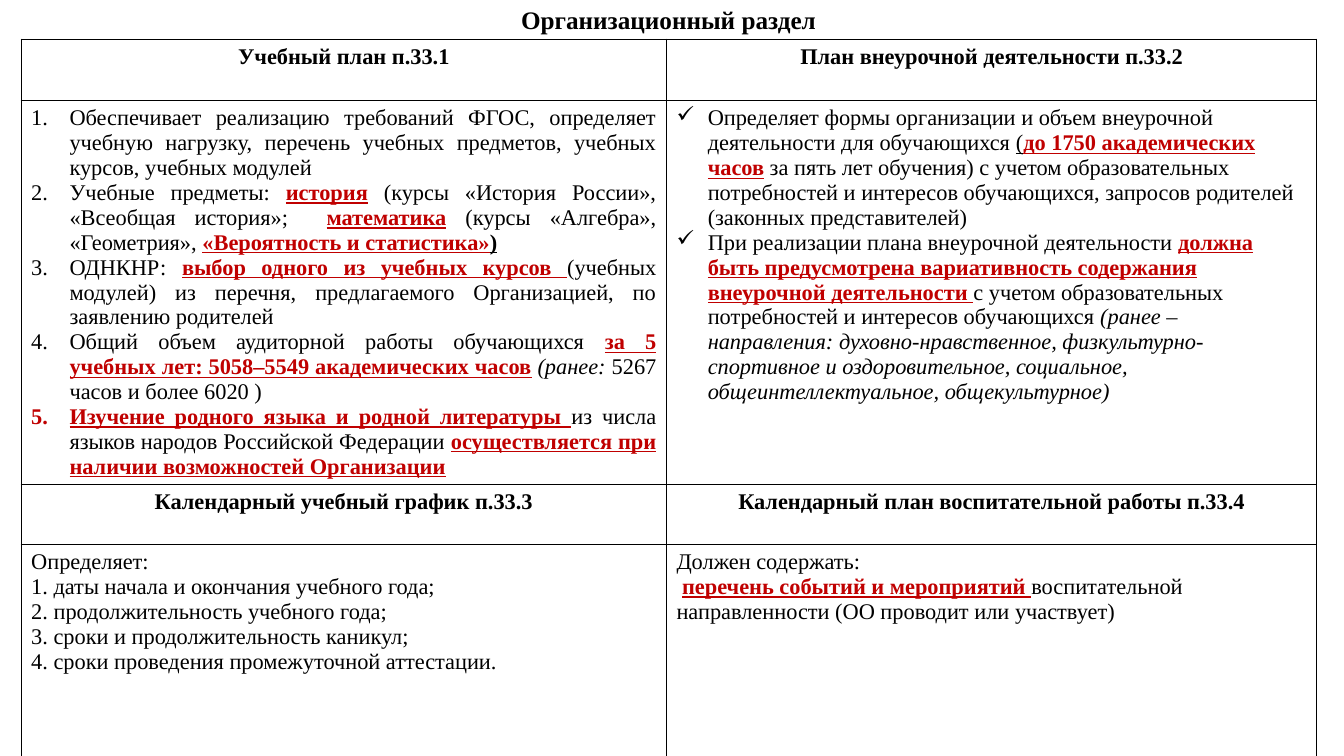
from lxml.etree import SubElement
from pptx import Presentation
from pptx.dml.color import RGBColor
from pptx.enum.text import PP_ALIGN
from pptx.oxml.ns import qn
from pptx.util import Inches, Pt

COLORS = {"text": "000000", "mark": "C00000", "fill": "FFFFFF", "line": "000000"}


class Page:
    """Holds the style and the current slide."""

    def __init__(self, slide, font="Times New Roman"):
        self.slide = slide
        self.font = font

    def color(self, name):
        return RGBColor.from_string(COLORS[name])

    # Flags of a run: b bold, u underline, i italic, r red
    def runs(self, para, parts, size):
        for part in parts:
            words, flags = (part, "") if isinstance(part, str) else part
            run = para.add_run()
            run.text = words
            font = run.font
            font.name, font.size = self.font, Pt(size)
            font.bold, font.italic = "b" in flags, "i" in flags
            font.underline = "u" in flags
            font.color.rgb = self.color("mark" if "r" in flags else "text")

    def bullet(self, para, indent, tag, **attrs):
        props = para._p.get_or_add_pPr()
        props.set("marL", str(Inches(indent)))
        props.set("indent", str(-Inches(indent)))
        SubElement(props, qn(tag), attrs)

    def title(self, text, left, top, width, height):
        box = self.slide.shapes.add_textbox(
            Inches(left), Inches(top), Inches(width), Inches(height))
        box.text_frame.word_wrap = False
        self.runs(box.text_frame.paragraphs[0], [(text, "b")], 18)

    def border(self, cell):
        props = cell._tc.get_or_add_tcPr()
        for side in ("a:lnL", "a:lnR", "a:lnT", "a:lnB"):
            line = SubElement(props, qn(side), w=str(Pt(1)))
            fill = SubElement(line, qn("a:solidFill"))
            SubElement(fill, qn("a:srgbClr"), val=COLORS["line"])

    def cell(self, cell, kind, paras):
        self.border(cell)
        cell.fill.solid()
        cell.fill.fore_color.rgb = self.color("fill")
        frame = cell.text_frame
        for num, parts in enumerate(paras):
            para = frame.add_paragraph() if num else frame.paragraphs[0]
            if kind == "head":
                para.alignment = PP_ALIGN.CENTER
            elif kind == "steps":
                para.alignment = PP_ALIGN.JUSTIFY
                self.bullet(para, 0.38, "a:buAutoNum", type="arabicPeriod")
            elif kind == "checks":
                self.bullet(para, 0.31, "a:buChar", char="✓")
            self.runs(para, parts, 16)

    def table(self, left, top, widths, heights, rows):
        table = self.slide.shapes.add_table(
            len(heights), len(widths), Inches(left), Inches(top),
            Inches(sum(widths)), Inches(sum(heights))).table
        table.first_row = table.horz_banding = False
        for col, width in zip(table.columns, widths):
            col.width = Inches(width)
        for row, height, cells in zip(table.rows, heights, rows):
            row.height = Inches(height)
            for cell, (kind, paras) in zip(row.cells, cells):
                self.cell(cell, kind, paras)


def head(text):
    return "head", [[(text, "b")]]


def red(text):
    return text, "bur"


# Curriculum
STUDY = [
    ["Обеспечивает реализацию требований ФГОС, определяет учебную нагрузку, "
     "перечень учебных предметов, учебных курсов, учебных модулей"],
    ["Учебные предметы: ", red("история"),
     " (курсы «История России», «Всеобщая история»;  ", red("математика"),
     " (курсы «Алгебра», «Геометрия», ", red("«Вероятность и статистика»"),
     (")", "bu")],
    ["ОДНКНР: ", red("выбор одного из учебных курсов "),
     "(учебных модулей) из перечня, предлагаемого Организацией, "
     "по заявлению родителей"],
    ["Общий объем аудиторной работы обучающихся ",
     red("за 5 учебных лет: 5058–5549 академических часов"), " ",
     ("(ранее: ", "i"), "5267 часов и более 6020 )"],
    [red("Изучение родного языка и родной литературы "),
     "из числа языков народов Российской Федерации ",
     red("осуществляется при наличии возможностей Организации")],
]

# Extracurricular work
EXTRA = [
    ["Определяет формы организации и объем внеурочной деятельности "
     "для обучающихся ", ("(", "u"), red("до 1750 академических часов"),
     " за пять лет обучения) с учетом образовательных потребностей и интересов "
     "обучающихся, запросов родителей (законных представителей)"],
    ["При реализации плана внеурочной деятельности ",
     red("должна быть предусмотрена вариативность содержания "
         "внеурочной деятельности "),
     "с учетом образовательных потребностей и интересов обучающихся ",
     ("(ранее – направления: духовно-нравственное, физкультурно-спортивное и "
      "оздоровительное, социальное, общеинтеллектуальное, общекультурное)", "i")],
]

# Calendars
DATES = [
    ["Определяет:"],
    ["1. даты начала и окончания учебного года;"],
    ["2. продолжительность учебного года;"],
    ["3. сроки и продолжительность каникул;"],
    ["4. сроки проведения промежуточной аттестации."],
]
EVENTS = [
    ["Должен содержать:"],
    [" ", red("перечень событий и мероприятий "),
     "воспитательной направленности (ОО проводит или участвует)"],
]

ROWS = [
    [head("Учебный план п.33.1"), head("План внеурочной деятельности п.33.2")],
    [("steps", STUDY), ("checks", EXTRA)],
    [head("Календарный учебный график п.33.3"),
     head("Календарный план воспитательной работы п.33.4")],
    [("plain", DATES), ("plain", EVENTS)],
]


def main():
    deck = Presentation()
    deck.slide_width, deck.slide_height = Inches(13.33), Inches(7.5)
    page = Page(deck.slides.add_slide(deck.slide_layouts[6]))
    page.table(0.21, 0.39, [6.4, 6.45], [0.61, 3.8, 0.6, 2.9], ROWS)
    page.title("Организационный раздел", 5.07, -0.01, 4.16, 0.4)
    deck.save("out.pptx")


if __name__ == "__main__":
    main()
